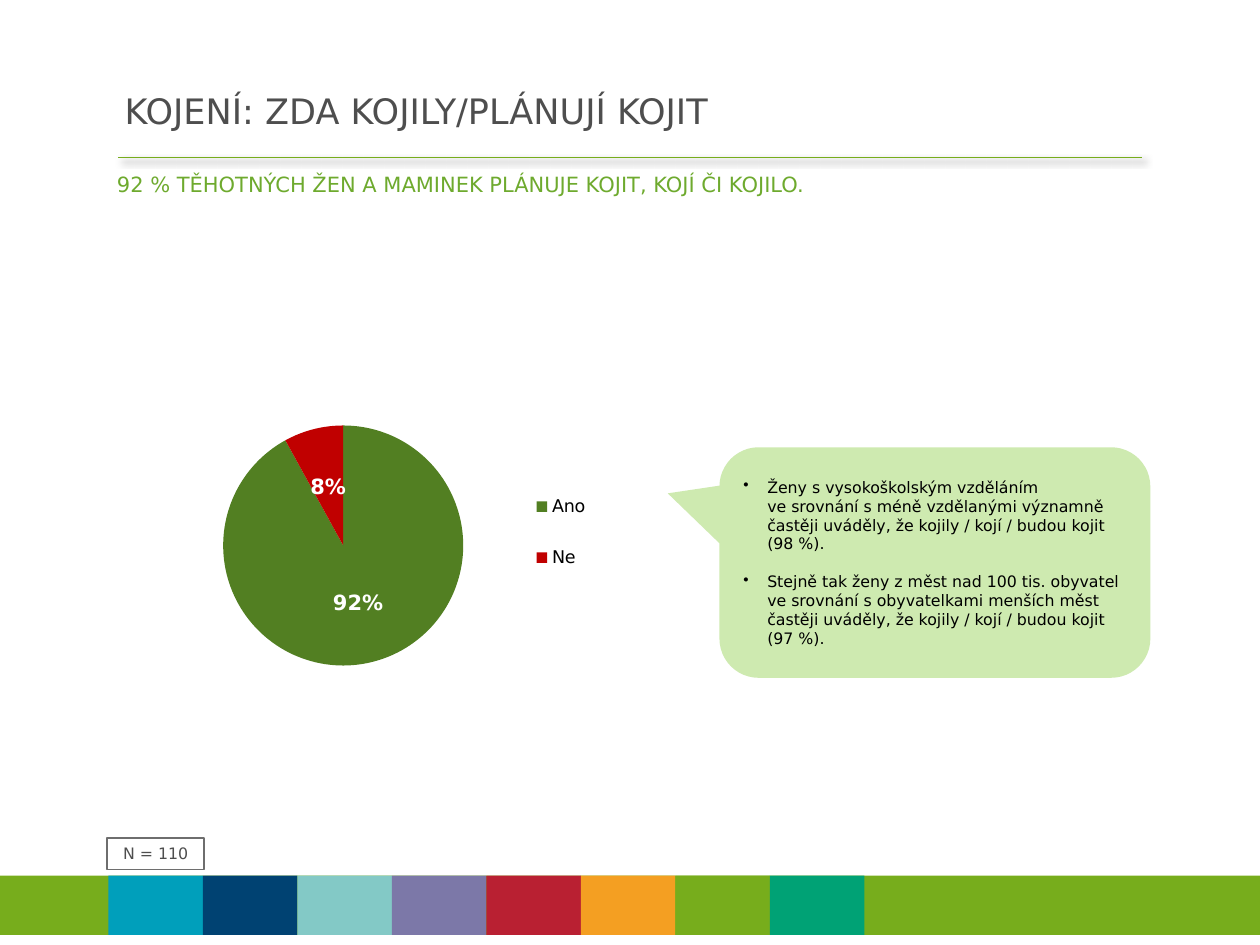
from lxml import etree
from pptx import Presentation
from pptx.chart.data import CategoryChartData
from pptx.dml.color import RGBColor
from pptx.enum.chart import XL_CHART_TYPE, XL_LABEL_POSITION, XL_LEGEND_POSITION
from pptx.enum.shapes import MSO_CONNECTOR, MSO_SHAPE
from pptx.enum.text import MSO_ANCHOR, PP_ALIGN
from pptx.oxml import parse_xml
from pptx.oxml.ns import nsdecls, qn
from pptx.util import Inches, Pt

RECT = MSO_SHAPE.RECTANGLE
CALLOUT = MSO_SHAPE.ROUNDED_RECTANGULAR_CALLOUT
STRAIGHT = MSO_CONNECTOR.STRAIGHT
PIE = XL_CHART_TYPE.PIE
CENTER_LABEL = XL_LABEL_POSITION.CENTER
LEGEND_LEFT = XL_LEGEND_POSITION.LEFT
TOP, MIDDLE = MSO_ANCHOR.TOP, MSO_ANCHOR.MIDDLE
LEFT, CENTER = PP_ALIGN.LEFT, PP_ALIGN.CENTER

GREEN = "77AD1C"
GREY = "4E4E4E"
BAND_COLOURS = ["009FBB", "004272", "83C9C6", "7C78A8",
                "B92032", "F49F22", GREEN, "00A275"]
FINDINGS = [
    "Ženy s vysokoškolským vzděláním \vve srovnání s méně vzdělanými významně "
    "častěji uváděly, že kojily / kojí / budou kojit (98 %).",
    "Stejně tak ženy z měst nad 100 tis. obyvatel ve srovnání s obyvatelkami "
    "menších měst častěji uváděly, že kojily / kojí / budou kojit (97 %).",
]


def rgb(value):
    return RGBColor.from_string(value)


def place(x, y, w, h):
    return Inches(x), Inches(y), Inches(w), Inches(h)


def set_layout(element, x, y, w, h, inner=False):
    """Fix the position of a chart part as fractions of the chart area."""
    for old in element.findall(qn("c:layout")):
        element.remove(old)
    target = '<c:layoutTarget val="inner"/>' if inner else ""
    layout = parse_xml(
        f'<c:layout {nsdecls("c")}><c:manualLayout>{target}'
        '<c:xMode val="edge"/><c:yMode val="edge"/>'
        f'<c:x val="{x}"/><c:y val="{y}"/><c:w val="{w}"/><c:h val="{h}"/>'
        '</c:manualLayout></c:layout>')
    legend_pos = element.find(qn("c:legendPos"))
    if legend_pos is None:
        element.insert(0, layout)
    else:
        legend_pos.addnext(layout)


class Deck:
    font = "DejaVu Sans"

    def __init__(self):
        self.prs = Presentation()
        self.prs.slide_width = Inches(10)
        self.prs.slide_height = Inches(7.5)
        self.slide = self.prs.slides.add_slide(self.prs.slide_layouts[6])

    def style(self, font, size, colour, bold=False):
        font.name = self.font
        font.size = Pt(size)
        font.bold = bold
        font.color.rgb = rgb(colour)

    def fill_text(self, sp, paragraphs, size, colour, anchor=TOP, align=LEFT,
                  bullet=False, gap=0):
        tf = sp.text_frame
        tf.word_wrap = True
        tf.vertical_anchor = anchor
        for i, text in enumerate(paragraphs):
            p = tf.add_paragraph() if i else tf.paragraphs[0]
            p.text = text
            p.alignment = align
            if i:
                p.space_before = Pt(gap)
            if bullet:
                pPr = p._p.get_or_add_pPr()
                pPr.set("marL", str(Inches(0.19)))
                pPr.set("indent", str(-Inches(0.19)))
                etree.SubElement(pPr, qn("a:buChar")).set("char", "•")
            for r in p.runs:
                self.style(r.font, size, colour)

    def text(self, box, text, size, colour, anchor=TOP):
        sp = self.slide.shapes.add_textbox(*place(*box))
        self.fill_text(sp, [text], size, colour, anchor)

    def shape(self, kind, box, fill=None, line=None):
        sp = self.slide.shapes.add_shape(kind, *place(*box))
        sp.shadow.inherit = False
        if fill:
            sp.fill.solid()
            sp.fill.fore_color.rgb = rgb(fill)
        else:
            sp.fill.background()
        if line:
            sp.line.color.rgb = rgb(line)
            sp.line.width = Pt(0.75)
        else:
            sp.line.fill.background()
        return sp

    def shadowed_rule(self, x1, x2, y, colour):
        line = self.slide.shapes.add_connector(
            STRAIGHT, Inches(x1), Inches(y), Inches(x2), Inches(y))
        line.line.color.rgb = rgb(colour)
        line.line.width = Pt(0.75)
        line._element.spPr.append(parse_xml(
            f'<a:effectLst {nsdecls("a")}><a:outerShdw blurRad="{Pt(4)}" '
            f'dist="{Pt(3)}" dir="{45 * 60000}" algn="tl" rotWithShape="0">'
            '<a:srgbClr val="000000"><a:alpha val="40000"/></a:srgbClr>'
            '</a:outerShdw></a:effectLst>'))

    def pie(self, box, values, colours):
        data = CategoryChartData(number_format="0%")
        data.categories = list(values)
        data.add_series("Series 1", list(values.values()))
        chart = self.slide.shapes.add_chart(PIE, *place(*box), data).chart
        chart.has_title = False
        self.style(chart.font, 18, "000000")
        chart.has_legend = True
        legend = chart.legend
        legend.position = LEGEND_LEFT
        legend.include_in_layout = False
        self.style(legend.font, 10, "000000")
        set_layout(legend._element, 0.62, 0.33, 0.14, 0.3)

        plot = chart.plots[0]
        plot.vary_by_categories = True
        set_layout(chart._chartSpace.chart.plotArea,
                   0.13, 0.24, 0.4, 0.54, inner=True)
        for i, colour in enumerate(colours):
            fill = plot.series[0].points[i].format.fill
            fill.solid()
            fill.fore_color.rgb = rgb(colour)
        plot.has_data_labels = True
        labels = plot.data_labels
        labels.show_value = True
        labels.show_percentage = False
        labels.number_format = "0%"
        labels.number_format_is_linked = False
        labels.position = CENTER_LABEL
        self.style(labels.font, 12, "FFFFFF", bold=True)


def main():
    deck = Deck()
    deck.shadowed_rule(0.94, 9.06, 1.25, GREEN)

    band_top, band_height, tile = 6.95, 0.47, 0.75
    deck.shape(RECT, (0, band_top, 10, band_height), GREEN)
    for i, colour in enumerate(BAND_COLOURS):
        deck.shape(RECT, (0.86 + i * tile, band_top, tile, band_height), colour)

    deck.text((0.89, 0.62, 8.87, 0.51), "KOJENÍ: ZDA KOJILY/PLÁNUJÍ KOJIT",
              20, GREY, MIDDLE)
    deck.text((0.83, 1.31, 8.35, 0.8),
              "92 % TĚHOTNÝCH ŽEN A MAMINEK PLÁNUJE KOJIT, KOJÍ ČI KOJILO.",
              12, "6EAA2E")

    sample = deck.shape(RECT, (0.85, 6.65, 0.77, 0.25), line="6E6E6E")
    deck.fill_text(sample, ["N = 110"], 9, GREY, align=CENTER)

    deck.pie((1.14, 2.53, 4.8, 3.53), {"Ano": 0.92, "Ne": 0.08},
             ["527F22", "C00000"])

    callout = deck.shape(CALLOUT, (5.71, 3.55, 3.42, 1.83), "CEEAB0")
    for i, value in enumerate([-0.62, -0.3, 0.17]):
        callout.adjustments[i] = value
    deck.fill_text(callout, FINDINGS, 9, "000000", MIDDLE, bullet=True,
                   gap=10.7)

    deck.prs.save("out.pptx")


if __name__ == "__main__":
    main()
